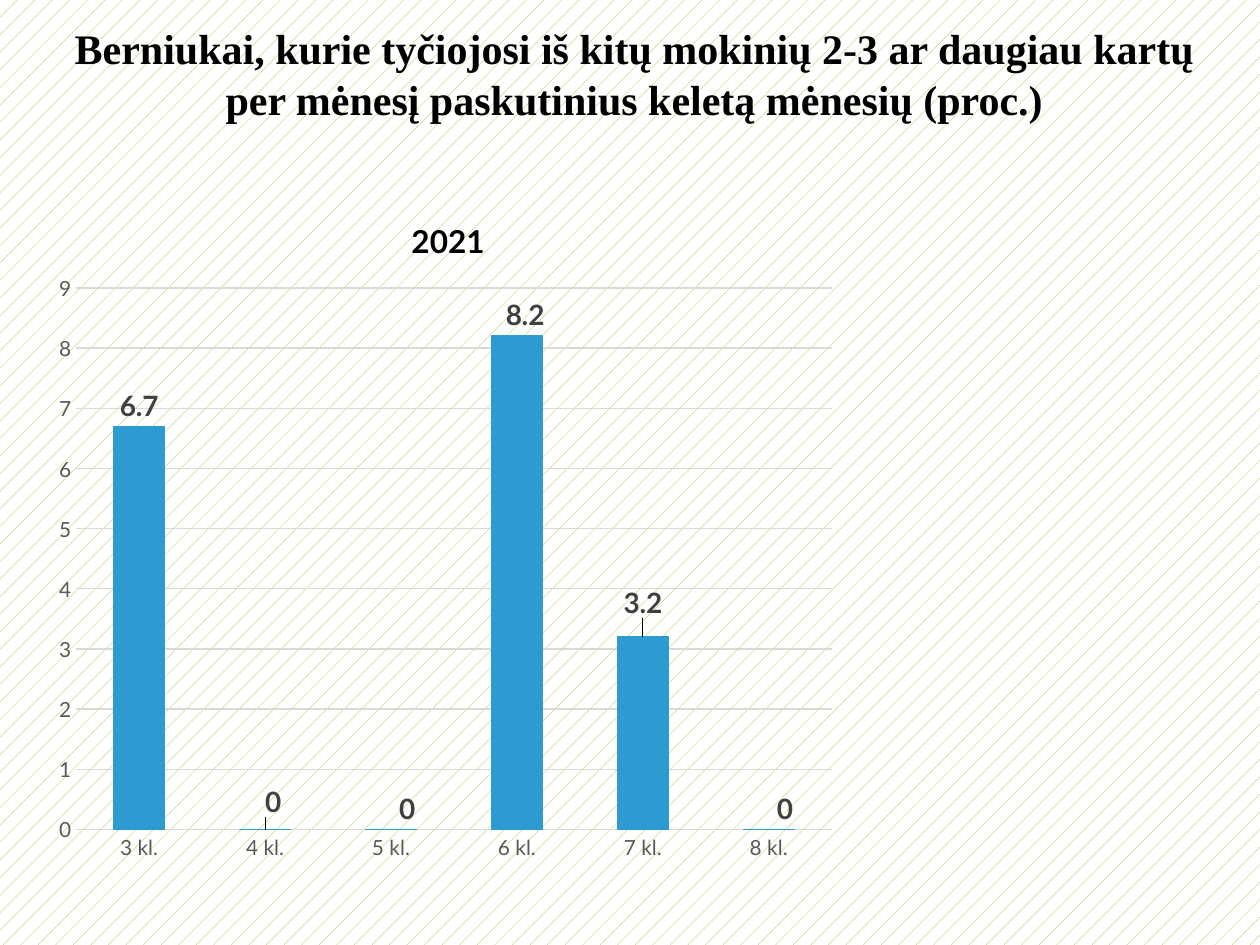
import pptx
import pptx.chart.data
import pptx.dml.color
import pptx.enum.chart
import pptx.enum.dml
import pptx.enum.text
import pptx.oxml
import pptx.oxml.ns
import pptx.util
from pptx.util import Inches

RGBColor = pptx.dml.color.RGBColor
BLACK = RGBColor(0x00, 0x00, 0x00)
WHITE = RGBColor(0xFF, 0xFF, 0xFF)
GREEN = RGBColor(0x90, 0xC2, 0x26)
BLUE = RGBColor(0x2D, 0x9A, 0xD1)
GRID_GREY = RGBColor(0xD9, 0xD9, 0xD9)
AXIS_GREY = RGBColor(0x59, 0x59, 0x59)
LABEL_GREY = RGBColor(0x40, 0x40, 0x40)

HEADLINE = (
    "Berniukai, kurie tyčiojosi iš kitų mokinių 2-3 ar daugiau kartų "
    "per mėnesį paskutinius keletą mėnesių (proc.)"
)
YEAR = "2021"
GRADES = [f"{grade} kl." for grade in range(3, 9)]
SHARES = [6.7, 0, 0, 8.2, 3.2, 0]
LABEL_SHIFTS = [(0, 0), (0.01, -0.01), (0.02, 0), (0.01, 0), (0, -0.02), (0.02, 0)]


def format_font(font, size, color, bold=False, name="Lato"):
    """Set the typeface, size, colour and weight of a font."""
    font.name = name
    font.size = pptx.util.Pt(size)
    font.bold = bold
    font.color.rgb = color


def write_text(frame, text, **style):
    """Write one centred paragraph into a text frame."""
    paragraph = frame.paragraphs[0]
    paragraph.alignment = pptx.enum.text.PP_ALIGN.CENTER
    run = paragraph.add_run()
    run.text = text
    format_font(run.font, **style)


def set_layout(parent, position, **settings):
    """Give a chart part a manual layout at a child position."""
    for old_layout in parent.findall(pptx.oxml.ns.qn("c:layout")):
        parent.remove(old_layout)
    entries = "".join(f'<c:{tag} val="{value}"/>' for tag, value in settings.items())
    layout = pptx.oxml.parse_xml(
        f'<c:layout {pptx.oxml.ns.nsdecls("c")}>'
        f"<c:manualLayout>{entries}</c:manualLayout></c:layout>"
    )
    parent.insert(position, layout)


def place_headline(slide, left, top, width, height):
    """Place and format the slide title."""
    headline = slide.shapes.title
    headline.left, headline.top = left, top
    headline.width, headline.height = width, height
    frame = headline.text_frame
    frame.word_wrap = True
    frame.auto_size = pptx.enum.text.MSO_AUTO_SIZE.NONE
    frame.vertical_anchor = pptx.enum.text.MSO_ANCHOR.TOP
    write_text(frame, HEADLINE, size=24, color=BLACK, bold=True, name="Times New Roman")


def format_axis(axis):
    """Show an axis by its grey labels only."""
    axis.major_tick_mark = pptx.enum.chart.XL_TICK_MARK.NONE
    axis.minor_tick_mark = pptx.enum.chart.XL_TICK_MARK.NONE
    axis.format.line.fill.background()
    format_font(axis.tick_labels.font, 11.9, AXIS_GREY)


def format_labels(plot, series):
    """Show bold values above the columns, each with its own shift."""
    plot.has_data_labels = True
    plot.data_labels.show_value = True
    outside = pptx.enum.chart.XL_LABEL_POSITION.OUTSIDE_END
    for index, (x, y) in enumerate(LABEL_SHIFTS):
        label = series.points[index].data_label
        format_font(label.font, 16, LABEL_GREY, bold=True)
        label.position = outside
    for entry, (x, y) in zip(series.data_labels._element.dLbl_lst, LABEL_SHIFTS):
        set_layout(entry, 1, x=x, y=y)
    series.data_labels.show_value = True
    format_font(series.data_labels.font, 16, LABEL_GREY, bold=True)


def place_share_chart(slide, left, top, width, height):
    """Place the column chart of shares by grade."""
    shares = pptx.chart.data.CategoryChartData()
    shares.categories = GRADES
    shares.add_series(YEAR, SHARES)
    chart = slide.shapes.add_chart(
        pptx.enum.chart.XL_CHART_TYPE.COLUMN_CLUSTERED, left, top, width, height, shares
    ).chart
    format_font(chart.font, 10, BLACK)
    chart.has_legend = False
    chart.has_title = True
    write_text(chart.chart_title.text_frame, YEAR, size=18, color=BLACK, bold=True)
    set_layout(chart.chart_title._element, 1, xMode="edge", yMode="edge", x=0.45, y=0.04)

    plot = chart.plots[0]
    plot.gap_width = 150
    plot.vary_by_categories = False
    series = plot.series[0]
    series.format.fill.solid()
    series.format.fill.fore_color.rgb = BLUE
    series.format.line.color.rgb = BLUE
    series.format.line.width = pptx.util.Pt(0.75)
    format_labels(plot, series)

    format_axis(chart.category_axis)
    format_axis(chart.value_axis)
    chart.value_axis.minimum_scale = 0
    chart.value_axis.maximum_scale = 9
    chart.value_axis.major_unit = 1
    gridline = chart.value_axis.major_gridlines.format.line
    gridline.color.rgb = GRID_GREY
    gridline.width = pptx.util.Pt(0.75)
    set_layout(
        plot._element.getparent(), 0, layoutTarget="inner",
        xMode="edge", yMode="edge", x=0.04, y=0.15, w=0.94, h=0.79,
    )


def main():
    """Build and save the presentation."""
    presentation = pptx.Presentation()
    presentation.slide_width = Inches(10)
    presentation.slide_height = Inches(7.5)
    slide = presentation.slides.add_slide(presentation.slide_layouts[5])
    background = slide.background.fill
    background.patterned()
    background.pattern = pptx.enum.dml.MSO_PATTERN.PERCENT_5
    background.fore_color.rgb = GREEN
    background.back_color.rgb = WHITE
    place_headline(slide, Inches(0.35), Inches(0.13), Inches(9.37), Inches(1.34))
    place_share_chart(slide, Inches(0.35), Inches(1.47), Inches(6.38), Inches(5.44))
    presentation.save("out.pptx")


if __name__ == "__main__":
    main()
